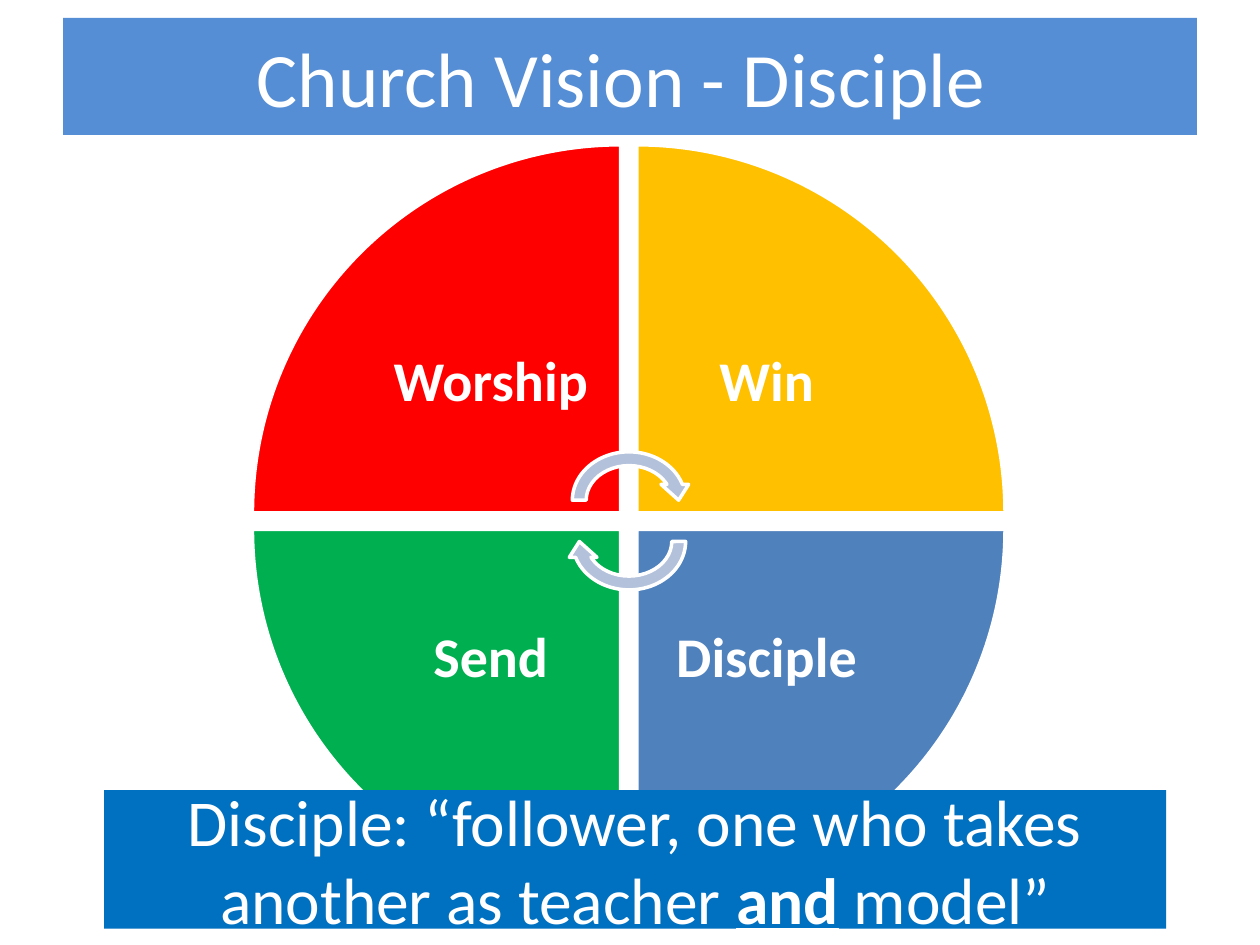
from pptx import Presentation
from pptx.dml.color import RGBColor
from pptx.enum.shapes import MSO_SHAPE as Preset
from pptx.enum.text import MSO_ANCHOR as Anchor, MSO_AUTO_SIZE as AutoSize, PP_ALIGN as Align
from pptx.oxml.ns import qn
from pptx.util import Cm, Pt

FONT = "Calibri"
WHITE = "FFFFFF"

# Wheel geometry in centimetres
WHEEL_LEFT, WHEEL_TOP = 5.09, 2.92
WEDGE_SIZE, GAP = 7.42, 0.33
LABEL_SIZE = 5.23

# Clockwise from the upper left: label, colour, column, row
WEDGES = [
    ("Worship", "FF0000", 0, 0),
    ("Win", "FFC000", 1, 0),
    ("Disciple", "4F81BD", 1, 1),
    ("Send", "00B050", 0, 1),
]


def color(hex_string):
    return RGBColor.from_string(hex_string)


def set_fill(shape, hex_string):
    shape.fill.solid()
    shape.fill.fore_color.rgb = color(hex_string)


def add_run(paragraph, text, size, bold=False, underline=False):
    run = paragraph.add_run()
    run.text = text
    font = run.font
    font.name, font.size = FONT, Pt(size)
    font.bold, font.underline = bold, underline
    font.color.rgb = color(WHITE)


def centered_paragraph(text_frame):
    text_frame.word_wrap = True
    text_frame.auto_size = AutoSize.NONE
    text_frame.vertical_anchor = Anchor.MIDDLE
    paragraph = text_frame.paragraphs[0]
    paragraph.alignment = Align.CENTER
    paragraph.space_before = Pt(0)
    return paragraph


def add_outlined_shape(slide, preset, left, top, width, height, fill, rotation):
    shape = slide.shapes.add_shape(preset, Cm(left), Cm(top), Cm(width), Cm(height))
    shape.shadow.inherit = False
    shape.rotation = rotation
    set_fill(shape, fill)
    shape.line.color.rgb = color(WHITE)
    shape.line.width = Pt(2)


def add_wedge(slide, text, fill, column, row, rotation):
    left = WHEEL_LEFT + column * (WEDGE_SIZE + GAP)
    top = WHEEL_TOP + row * (WEDGE_SIZE + GAP)
    add_outlined_shape(slide, Preset.PIE_WEDGE, left, top,
                       WEDGE_SIZE, WEDGE_SIZE, fill, rotation)
    # The label sits in the corner nearest the hub
    inset = WEDGE_SIZE - LABEL_SIZE
    label = slide.shapes.add_textbox(
        Cm(left + inset * (1 - column)), Cm(top + inset * (1 - row)),
        Cm(LABEL_SIZE), Cm(LABEL_SIZE))
    paragraph = centered_paragraph(label.text_frame)
    paragraph.line_spacing = 0.9
    add_run(paragraph, text, 32, bold=True)


def format_banner(placeholder, left, top, width, height, fill):
    placeholder.left, placeholder.top = Cm(left), Cm(top)
    placeholder.width, placeholder.height = Cm(width), Cm(height)
    set_fill(placeholder, fill)
    # Bring the banner in front of the wheel
    element = placeholder.element
    element.getparent().append(element)
    return centered_paragraph(placeholder.text_frame)


def remove_bullet(paragraph):
    properties = paragraph._p.get_or_add_pPr()
    properties.set("marL", "0")
    properties.set("indent", "0")
    properties.append(properties.makeelement(qn("a:buNone"), {}))


def main():
    presentation = Presentation()
    presentation.slide_width, presentation.slide_height = Cm(25.4), Cm(19.05)
    slide = presentation.slides.add_slide(presentation.slide_layouts[1])

    # Wheel
    for index, wedge in enumerate(WEDGES):
        add_wedge(slide, *wedge, rotation=90 * index)

    # Circling arrows at the hub
    for top, rotation in ((8.97, 0), (9.8, 180)):
        add_outlined_shape(slide, Preset.CIRCULAR_ARROW, 11.4, top,
                           2.56, 2.23, "B3C1DB", rotation)

    # Title banner
    title = format_banner(slide.shapes.title, 1.27, 0.36, 22.86, 2.36, "558ED5")
    add_run(title, "Church Vision - Disciple ", 44)

    # Definition banner
    definition = format_banner(slide.placeholders[1], 2.1, 15.93, 21.41, 2.79, "0070C0")
    remove_bullet(definition)
    add_run(definition, "Disciple: “follower, one who takes another as teacher ", 37.4)
    add_run(definition, "and", 37.4, bold=True, underline=True)
    add_run(definition, " model”", 37.4)

    presentation.save("out.pptx")


if __name__ == "__main__":
    main()
